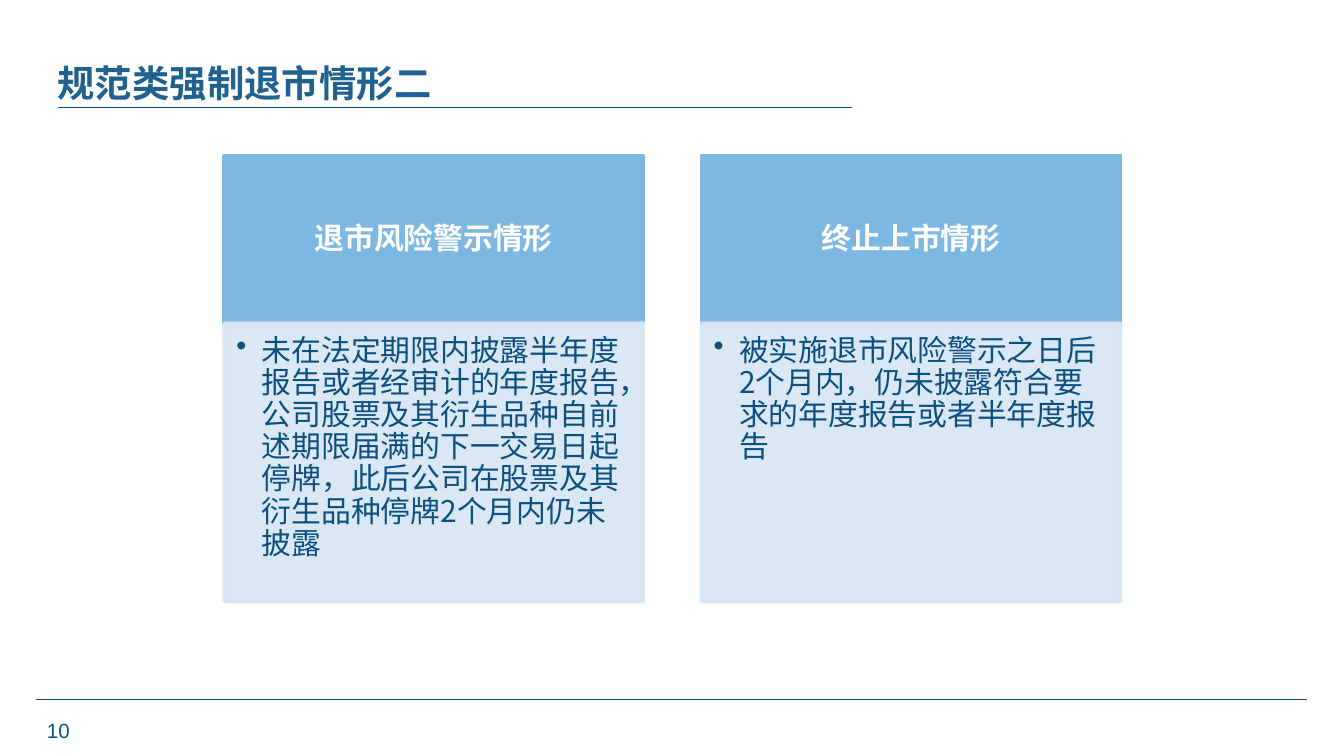
from lxml import etree
from pptx import Presentation
from pptx.dml.color import RGBColor
from pptx.enum.shapes import MSO_CONNECTOR, MSO_SHAPE
from pptx.enum.text import MSO_ANCHOR, PP_ALIGN
from pptx.oxml.ns import qn
from pptx.util import Cm, Pt

TITLE = "规范类强制退市情形二"
PAGE_NUMBER = "10"
CARDS = [
    ("退市风险警示情形",
     "未在法定期限内披露半年度报告或者经审计的年度报告，公司股票及其衍生品种自前述期限届满的下一交易日起停牌，"
     "此后公司在股票及其衍生品种停牌2个月内仍未披露"),
    ("终止上市情形",
     "被实施退市风险警示之日后2个月内，仍未披露符合要求的年度报告或者半年度报告"),
]

NAVY = RGBColor(0x0C, 0x50, 0x7F)
TITLE_BLUE = RGBColor(0x20, 0x61, 0x8F)
SKY = RGBColor(0x7D, 0xB8, 0xE2)
PALE = RGBColor(0xD7, 0xE6, 0xF4)
WHITE = RGBColor(0xFF, 0xFF, 0xFF)
CJK_FONT = "Noto Sans CJK SC"
LEFT, CENTER = PP_ALIGN.LEFT, PP_ALIGN.CENTER
TOP, MIDDLE = MSO_ANCHOR.TOP, MSO_ANCHOR.MIDDLE

# Centimetres
CARD_LEFT, CARD_TOP, CARD_WIDTH, CARD_PITCH = 4.24, 2.95, 7.92, 9.02
HEADER_HEIGHT, BODY_HEIGHT = 3.16, 5.26
BULLET_INDENT = 0.48
RULES = [(0.69, 24.71, 13.23), (1.09, 16.1, 2.03)]  # left, right, y


def write(shape, text, size, color, bold=False, align=LEFT, anchor=TOP,
          font_name=CJK_FONT, margins=None, bullet=False):
    frame = shape.text_frame
    frame.word_wrap = True
    frame.vertical_anchor = anchor
    if margins:
        (frame.margin_left, frame.margin_top,
         frame.margin_right, frame.margin_bottom) = map(Cm, margins)
    frame.text = text
    paragraph = frame.paragraphs[0]
    paragraph.alignment = align
    if bullet:
        props = paragraph._p.get_or_add_pPr()
        props.set("marL", str(Cm(BULLET_INDENT)))
        props.set("indent", str(-Cm(BULLET_INDENT)))
        etree.SubElement(props, qn("a:buChar")).set("char", "•")
    run = paragraph.runs[0]
    run.font.size = Pt(size)
    run.font.bold = bold
    run.font.color.rgb = color
    run.font.name = font_name
    east_asian = etree.SubElement(run._r.get_or_add_rPr(), qn("a:ea"))
    east_asian.set("typeface", font_name)
    return paragraph


def add_panel(slide, left, top, height, color, opacity=100):
    panel = slide.shapes.add_shape(
        MSO_SHAPE.RECTANGLE, Cm(left), Cm(top), Cm(CARD_WIDTH), Cm(height))
    panel.shadow.inherit = False
    panel.fill.solid()
    panel.fill.fore_color.rgb = color
    panel.line.color.rgb = color
    panel.line.width = Pt(2)
    if opacity < 100:
        for tint in panel._element.spPr.iter(qn("a:srgbClr")):
            etree.SubElement(tint, qn("a:alpha")).set("val", str(opacity * 1000))
    return panel


def add_rule(slide, left, right, y):
    rule = slide.shapes.add_connector(
        MSO_CONNECTOR.STRAIGHT, Cm(left), Cm(y), Cm(right), Cm(y))
    rule.line.color.rgb = NAVY
    rule.line.width = Pt(0.5)
    etree.SubElement(rule._element.spPr, qn("a:effectLst"))


def add_card(slide, left, heading, detail):
    header = add_panel(slide, left, CARD_TOP, HEADER_HEIGHT, SKY)
    heading_line = write(header, heading, 16, WHITE, bold=True, align=CENTER,
                         anchor=MIDDLE, margins=(0.3, 0.18, 0.3, 0.18))
    body = add_panel(slide, left, CARD_TOP + HEADER_HEIGHT, BODY_HEIGHT, PALE, 90)
    detail_line = write(body, detail, 16, NAVY, bullet=True,
                        margins=(0.23, 0.23, 0.3, 0.36))
    heading_line.line_spacing = detail_line.line_spacing = 0.9


def main():
    prs = Presentation()
    prs.slide_width, prs.slide_height = Cm(25.4), Cm(14.29)
    slide = prs.slides.add_slide(prs.slide_layouts[6])

    for rule in RULES:
        add_rule(slide, *rule)
    number = slide.shapes.add_textbox(Cm(0.51), Cm(13.44), Cm(1.19), Cm(0.61))
    write(number, PAGE_NUMBER, 11, NAVY, align=CENTER, font_name="Arial")
    title = slide.shapes.add_textbox(Cm(0.84), Cm(1.02), Cm(16.2), Cm(1.12))
    write(title, TITLE, 20, TITLE_BLUE, bold=True)
    for index, (heading, detail) in enumerate(CARDS):
        add_card(slide, CARD_LEFT + index * CARD_PITCH, heading, detail)

    prs.save("out.pptx")


if __name__ == "__main__":
    main()
